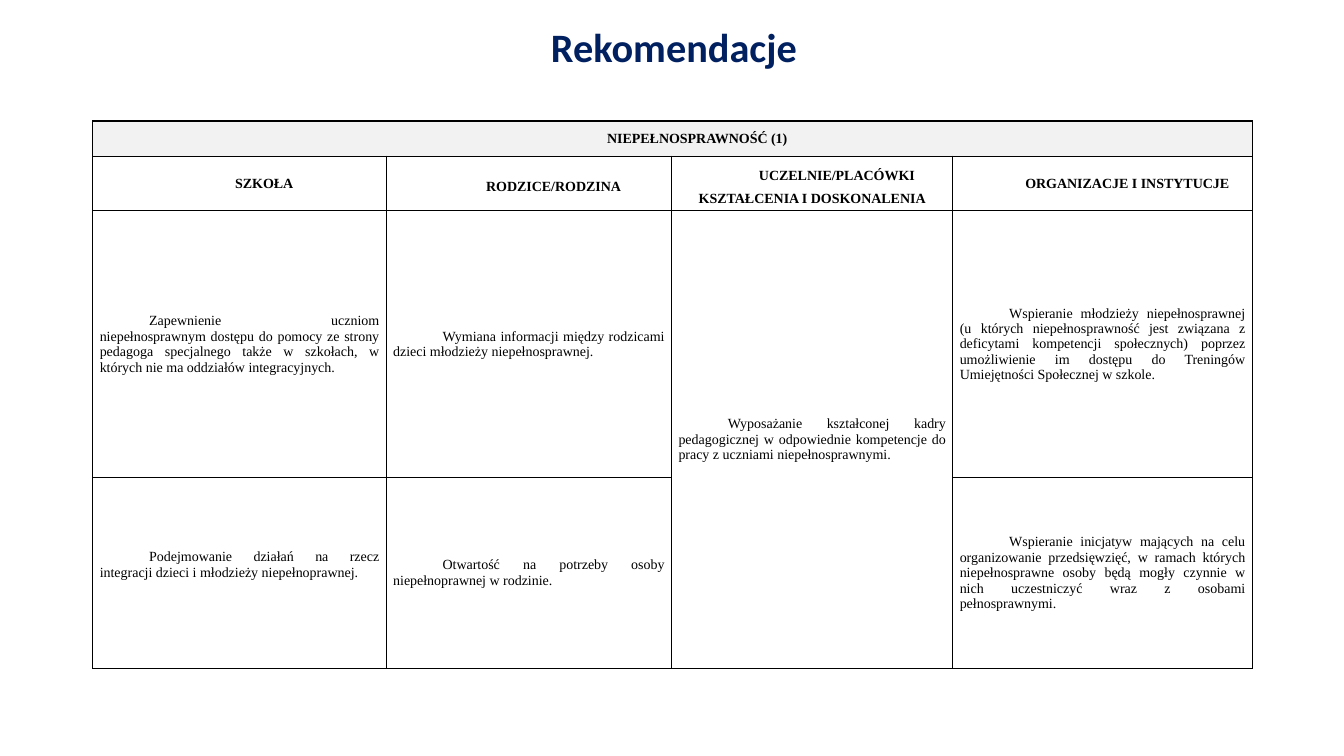
from dataclasses import dataclass

from lxml.etree import SubElement
from pptx import Presentation
from pptx.dml.color import RGBColor
from pptx.enum.text import MSO_ANCHOR, PP_ALIGN
from pptx.oxml.ns import qn
from pptx.util import Inches, Pt


@dataclass(frozen=True)
class Theme:
    navy: str = "002060"
    black: str = "000000"
    band: str = "F2F2F2"
    title_font: str = "Calibri"
    table_font: str = "Times New Roman"
    title_size: float = 28.8
    table_size: float = 10
    border: float = 1
    first_indent: float = 0.49
    side_margin: float = 0.07
    line_height: float = 0.16


THEME = Theme()
SLIDE_WIDTH, SLIDE_HEIGHT = 13.33, 7.5
COLUMNS = (2.91, 2.83, 2.79, 2.97)
ROWS = (0.35, 0.54, 2.65, 1.89)
TITLE_BOX = (2.78, 0.21, 7.81, 0.57)
TABLE_BOX = (0.92, 1.2, sum(COLUMNS), sum(ROWS))

TOPIC = "NIEPEŁNOSPRAWNOŚĆ (1)"
AUDIENCES = (
    ("SZKOŁA", 1),
    ("RODZICE/RODZINA", 1.5),
    ("UCZELNIE/PLACÓWKI KSZTAŁCENIA I DOSKONALENIA", 1.5),
    ("ORGANIZACJE I INSTYTUCJE", 1),
)
RECOMMENDATIONS = (
    (
        "Zapewnienie uczniom niepełnosprawnym dostępu do pomocy ze strony "
        "pedagoga specjalnego także w szkołach, w których nie ma oddziałów "
        "integracyjnych.",
        "Wymiana informacji między rodzicami dzieci młodzieży niepełnosprawnej.",
        "Wyposażanie kształconej kadry pedagogicznej w odpowiednie kompetencje "
        "do pracy z uczniami niepełnosprawnymi.",
        "Wspieranie młodzieży niepełnosprawnej (u których niepełnosprawność "
        "jest związana z deficytami kompetencji społecznych) poprzez "
        "umożliwienie im dostępu do Treningów Umiejętności Społecznej w szkole.",
    ),
    (
        "Podejmowanie działań na rzecz integracji dzieci i młodzieży "
        "niepełnoprawnej.",
        "Otwartość na potrzeby osoby niepełnoprawnej w rodzinie.",
        None,
        "Wspieranie inicjatyw mających na celu organizowanie przedsięwzięć, "
        "w ramach których niepełnosprawne osoby będą mogły czynnie w nich "
        "uczestniczyć wraz z osobami pełnosprawnymi.",
    ),
)


def add_run(paragraph, text, font, size, color, bold):
    run = paragraph.add_run()
    run.text = text
    run.font.name = font
    run.font.size = Pt(size)
    run.font.bold = bold
    run.font.color.rgb = RGBColor.from_string(color)


def add_title(slide, box, text):
    frame = slide.shapes.add_textbox(*map(Inches, box)).text_frame
    frame.word_wrap = True
    frame.vertical_anchor = MSO_ANCHOR.MIDDLE
    heading = frame.paragraphs[0]
    heading.alignment = PP_ALIGN.CENTER
    heading.line_spacing = 0.9
    add_run(heading, text, THEME.title_font, THEME.title_size, THEME.navy, True)


def format_cell(cell, fill=None):
    cell.margin_left = cell.margin_right = Inches(THEME.side_margin)
    cell.margin_top = cell.margin_bottom = 0
    cell.vertical_anchor = MSO_ANCHOR.MIDDLE
    properties = cell._tc.get_or_add_tcPr()
    for edge in ("a:lnL", "a:lnR", "a:lnT", "a:lnB"):
        line = SubElement(properties, qn(edge), w=str(Pt(THEME.border)))
        SubElement(SubElement(line, qn("a:solidFill")), qn("a:srgbClr"), val=THEME.black)
    if fill:
        cell.fill.solid()
        cell.fill.fore_color.rgb = RGBColor.from_string(fill)
    else:
        cell.fill.background()


def write_cell(cell, text, alignment, bold=False, spacing=1):
    entry = cell.text_frame.paragraphs[0]
    entry.alignment = alignment
    entry.line_spacing = spacing
    properties = entry._p.get_or_add_pPr()
    properties.set("marL", "0")
    properties.set("indent", str(Inches(THEME.first_indent)))
    add_run(entry, text, THEME.table_font, THEME.table_size, THEME.black, bold)


def add_recommendations(slide, box):
    left, top, width, height = map(Inches, box)
    table = slide.shapes.add_table(len(ROWS), len(COLUMNS), left, top, width, height).table
    table.first_row = table.horz_banding = False
    for column, share in zip(table.columns, COLUMNS):
        column.width = int(width * share / sum(COLUMNS))
    for row, share in zip(table.rows, ROWS):
        row.height = int(height * share / sum(ROWS))
    for index, row in enumerate(table.rows):
        for cell in row.cells:
            format_cell(cell, THEME.band if index == 0 else None)

    table.cell(0, 0).merge(table.cell(0, len(COLUMNS) - 1))
    table.cell(2, 2).merge(table.cell(3, 2))
    write_cell(table.cell(0, 0), TOPIC, PP_ALIGN.CENTER, bold=True)
    for column, (audience, spacing) in enumerate(AUDIENCES):
        write_cell(table.cell(1, column), audience, PP_ALIGN.CENTER, True, spacing)
    for row, advice in enumerate(RECOMMENDATIONS, start=2):
        for column, text in enumerate(advice):
            if text:
                write_cell(table.cell(row, column), text, PP_ALIGN.JUSTIFY)
    table.cell(3, 0).margin_bottom = Inches(THEME.line_height)


def main():
    deck = Presentation()
    deck.slide_width = Inches(SLIDE_WIDTH)
    deck.slide_height = Inches(SLIDE_HEIGHT)
    slide = deck.slides.add_slide(deck.slide_layouts[6])
    add_title(slide, TITLE_BOX, "Rekomendacje")
    add_recommendations(slide, TABLE_BOX)
    deck.save("out.pptx")


if __name__ == "__main__":
    main()
